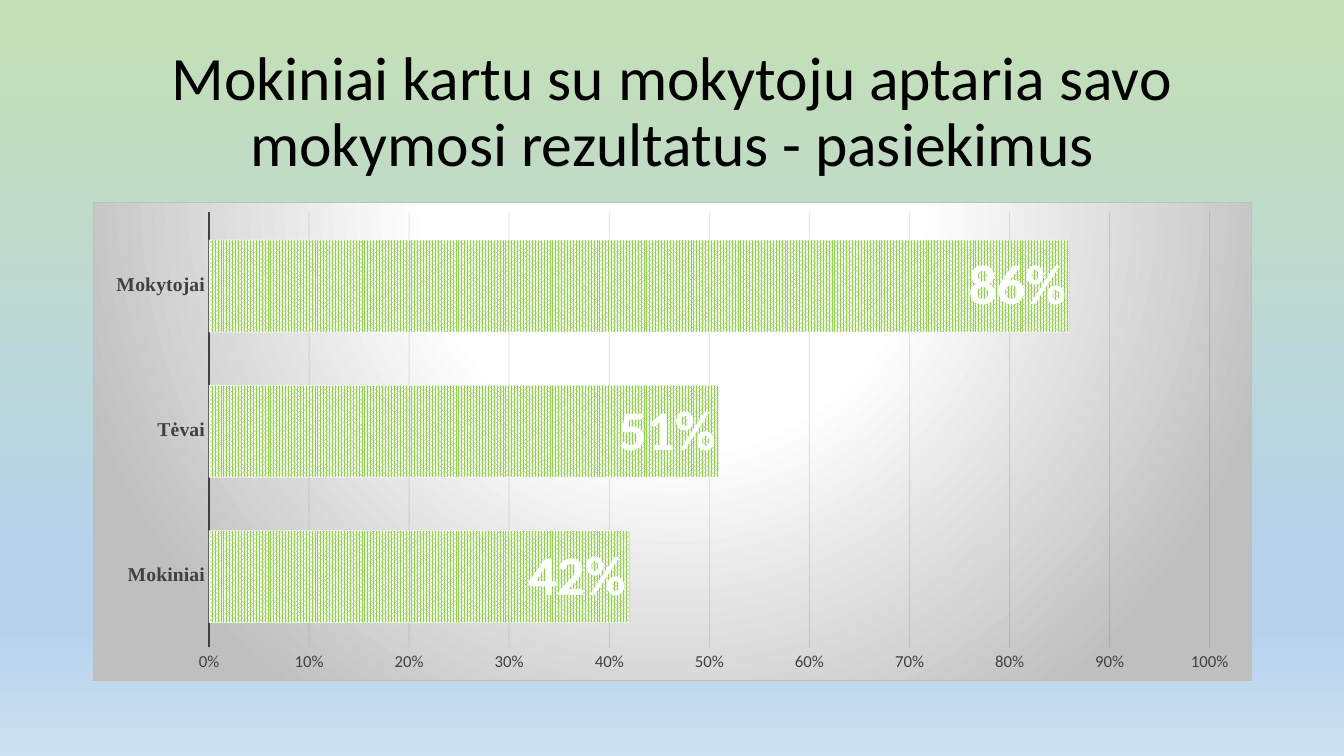
from dataclasses import dataclass
from lxml.etree import SubElement as Sub
from pptx import Presentation
from pptx.chart.data import CategoryChartData as Data
from pptx.dml.color import RGBColor as RGB
from pptx.enum.chart import XL_CHART_TYPE as Kind, XL_LABEL_POSITION as Spot, XL_TICK_MARK as Tick
from pptx.enum.dml import MSO_PATTERN as Pat
from pptx.enum.text import MSO_ANCHOR as Anchor, PP_ALIGN as Align
from pptx.oxml import parse_xml
from pptx.oxml.ns import nsdecls, qn
from pptx.util import Inches, Pt

TITLE = "Mokiniai kartu su mokytoju aptaria savo mokymosi rezultatus - pasiekimus"
GROUPS = ["Mokiniai", "Tėvai", "Mokytojai"]
SERIES = [
    ("Series 1", [0.42, 0.51, 0.86]),
    ("Series 2", [None] * 3),
    ("Series 3", [None] * 3),
]


@dataclass
class Theme:
    sans: str = "Calibri"
    serif: str = "Times New Roman"
    ink: str = "000000"
    axis: str = "404040"
    grid: str = "0D0D0D"
    white: str = "FFFFFF"
    edge: str = "BFBFBF"
    bars: tuple = ("92D050", "ED7D31", "A5A5A5")
    sky: tuple = ((0, "C5E0B4"), (74, "B5D2EC"), (83, "B5D2EC"), (100, "CEE1F2"))
    glow: tuple = ((0, "FFFFFF"), (39, "FFFFFF"), (100, "BFBFBF"))
    head: int = 44
    base: int = 10
    cat: int = 14
    val: int = 12
    marks: tuple = (40, 12, 12)


T = Theme()
LEFT, WIDE = Inches(0.92), Inches(11.5)


def color(code):
    return RGB.from_string(code)


def style(font, size, code, name=T.sans, bold=False):
    font.size, font.name, font.bold = Pt(size), name, bold
    font.color.rgb = color(code)


def stroke(line, code, width):
    line.color.rgb = color(code)
    line.width = Pt(width)


def fade(node, share):
    for tone in node.iter(qn("a:srgbClr")):
        Sub(tone, qn("a:alpha"), val=str(share * 1000))


def blend(stops, shade):
    marks = "".join(
        f'<a:gs pos="{at * 1000}"><a:srgbClr val="{code}"/></a:gs>' for at, code in stops
    )
    return parse_xml(
        f'<a:gradFill {nsdecls("a")} rotWithShape="1"><a:gsLst>{marks}</a:gsLst>{shade}</a:gradFill>'
    )


def paint(slide):
    slide.background.fill.solid()
    back = slide.element.find(".//" + qn("p:bgPr"))
    back.replace(back[0], blend(T.sky, '<a:lin ang="5400000" scaled="0"/>'))


def add_title(slide):
    frame = slide.shapes.add_textbox(LEFT, Inches(0.4), WIDE, Inches(1.45)).text_frame
    frame.word_wrap = True
    frame.vertical_anchor = Anchor.MIDDLE
    para = frame.paragraphs[0]
    para.text = TITLE
    para.alignment = Align.CENTER
    para.line_spacing = 0.9
    style(para.font, T.head, T.ink)


def frame_chart(chart):
    box = parse_xml(
        f'<c:spPr {nsdecls("c", "a")}><a:ln w="9525"><a:solidFill>'
        f'<a:srgbClr val="{T.edge}"/></a:solidFill></a:ln></c:spPr>'
    )
    shade = '<a:path path="circle"><a:fillToRect l="50000" t="-80000" r="50000" b="180000"/></a:path>'
    box.insert(0, blend(T.glow, shade))
    chart.element.find(qn("c:txPr")).addprevious(box)


def set_axes(chart):
    cat, val = chart.category_axis, chart.value_axis
    for axis in (cat, val):
        axis.major_tick_mark = axis.minor_tick_mark = Tick.NONE
    style(cat.tick_labels.font, T.cat, T.axis, T.serif, True)
    stroke(cat.format.line, T.axis, 1.5)
    style(val.tick_labels.font, T.val, T.axis)
    val.tick_labels.number_format = "0%"
    val.tick_labels.number_format_is_linked = False
    val.minimum_scale, val.maximum_scale, val.major_unit = 0, 1, 0.1
    val.format.line.fill.background()
    val.has_major_gridlines = True
    stroke(val.major_gridlines.format.line, T.grid, 0.75)
    fade(chart.element.find(".//" + qn("c:majorGridlines")), 10)


def set_bars(chart):
    plot = chart.plots[0]
    plot.gap_width, plot.overlap = 54, 98
    plot.vary_by_categories = False
    nodes = chart.element.iter(qn("c:ser"))
    for spot, (bar, node) in enumerate(zip(plot.series, nodes)):
        fill = bar.format.fill
        bar.invert_if_negative = False
        if spot == 0:
            fill.patterned()
            fill.pattern = Pat.PERCENT_80
            fill.fore_color.rgb = color(T.bars[0])
            fill.back_color.rgb = color(T.white)
        else:
            fill.solid()
            fill.fore_color.rgb = color(T.bars[spot])
            fade(node.find(qn("c:spPr")), 85)
        stroke(bar.format.line, T.white, 0.75)
        fade(node.find(qn("c:spPr")).find(qn("a:ln")), 50)
        marks = bar.data_labels
        marks.show_value = True
        marks.position = Spot.INSIDE_END
        marks.number_format = "0%"
        marks.number_format_is_linked = False
        style(marks.font, T.marks[spot], T.white, bold=True)


def add_bars(slide):
    data = Data(number_format="0%")
    data.categories = GROUPS
    for name, vals in SERIES:
        data.add_series(name, vals)
    chart = slide.shapes.add_chart(
        Kind.BAR_CLUSTERED, LEFT, Inches(2), WIDE, Inches(4.76), data
    ).chart
    chart.has_title = chart.has_legend = False
    style(chart.font, T.base, T.ink)
    frame_chart(chart)
    set_axes(chart)
    set_bars(chart)


def main():
    deck = Presentation()
    deck.slide_width, deck.slide_height = Inches(13.33), Inches(7.5)
    slide = deck.slides.add_slide(deck.slide_layouts[6])
    paint(slide)
    add_title(slide)
    add_bars(slide)
    deck.save("out.pptx")


if __name__ == "__main__":
    main()
